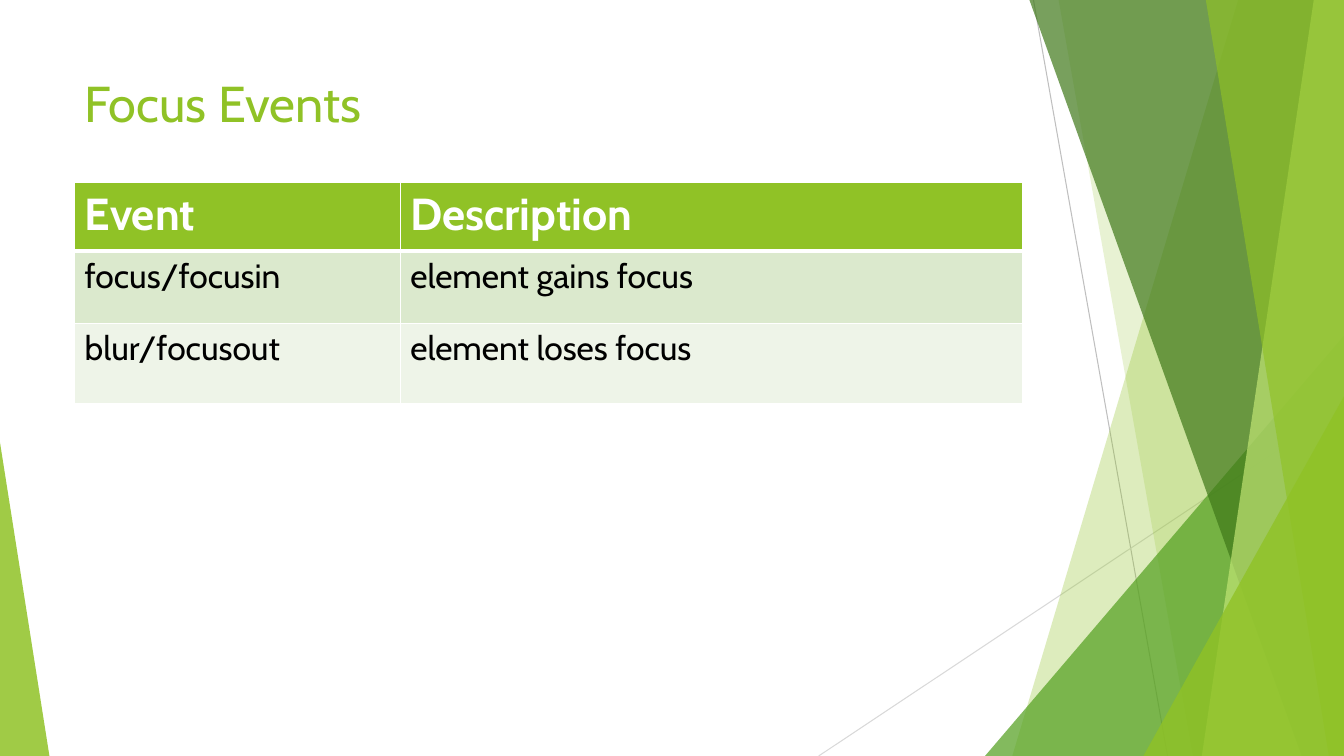
from dataclasses import dataclass
from lxml.etree import SubElement
from pptx import Presentation
from pptx.dml.color import RGBColor
from pptx.enum.shapes import MSO_CONNECTOR, MSO_SHAPE
from pptx.enum.text import MSO_ANCHOR, PP_ALIGN
from pptx.oxml.ns import qn
from pptx.util import Inches, Pt


@dataclass(frozen=True)
class Theme:
    face: str = "Cabin"
    lime: str = "90C226"
    green: str = "54A021"
    dark: str = "3F7819"
    pale: str = "C0E474"
    white: str = "FFFFFF"
    black: str = "000000"
    bands: tuple = ("DBE9CD", "EEF4E8")
    rules: tuple = ("BFBFBF", "D9D9D9")
    title: int = 36
    head: int = 32
    body: int = 24
    hair: float = 0.75
    thin: int = 1
    thick: int = 3


THEME = Theme()
WIDE, HIGH = 13.33, 7.5
ROWS = [
    ("Event", "Description"),
    ("focus/focusin", "element gains focus"),
    ("blur/focusout", "element loses focus"),
]


def apply(item, style):
    for key, value in style.items():
        setattr(item, key, value)


def paint(fill, tint):
    fill.solid()
    fill.fore_color.rgb = RGBColor.from_string(tint)


def write(frame, text, size, tint, bold=False):
    frame.text = text
    part = frame.paragraphs[0]
    part.alignment = PP_ALIGN.LEFT
    font = part.runs[0].font
    apply(font, {"name": THEME.face, "size": Pt(size), "bold": bold})
    font.color.rgb = RGBColor.from_string(tint)


def glaze(shape, tint, alpha):
    shape.shadow.inherit = False
    paint(shape.fill, tint)
    shape.line.fill.background()
    color = shape.element.spPr.find(".//" + qn("a:srgbClr"))
    SubElement(color, qn("a:alpha"), val=str(alpha * 1000))


def draw_line(slide, start, end, tint):
    ends = [Inches(n) for n in (*start, *end)]
    line = slide.shapes.add_connector(MSO_CONNECTOR.STRAIGHT, *ends)
    line.line.width = Pt(THEME.hair)
    paint(line.line.fill, tint)
    SubElement(line.element.spPr, qn("a:effectLst"))


def draw_shard(slide, box, top, base, tint, alpha):
    left, head, width, height = box
    right, foot = left + width, head + height
    points = [(left + top, head), (right, head), (right, foot), (left + base, foot)]
    points = [(Inches(x), Inches(y)) for x, y in points]
    path = slide.shapes.build_freeform(*points[0])
    path.add_line_segments(points[1:], close=True)
    glaze(path.convert_to_shape(), tint, alpha)


def draw_wedge(slide, box, peak, tint, alpha):
    size = [Inches(n) for n in box]
    wedge = slide.shapes.add_shape(MSO_SHAPE.ISOSCELES_TRIANGLE, *size)
    wedge.adjustments[0] = peak
    glaze(wedge, tint, alpha)


def draw_facets(slide, box):
    left, top, width, height = box
    right, foot = left + width, top + height

    def shard(*style):
        draw_shard(slide, box, *style)

    def wedge(wide, high, *style):
        draw_wedge(slide, (right - wide, foot - high, wide, high), 1, *style)

    draw_line(slide, (left + 0.48, top), (left + 1.81, foot), THEME.rules[0])
    draw_line(slide, (right, top + 4.03), (left - 1.65, foot), THEME.rules[1])
    shard(2.51, 0.27, THEME.lime, 30)
    shard(0.73, 2.06, THEME.lime, 20)
    wedge(3.56, 4.17, THEME.green, 72)
    shard(0.44, 3.14, THEME.dark, 70)
    shard(3.26, 2.15, THEME.pale, 70)
    shard(2.19, 3.41, THEME.lime, 65)
    wedge(1.99, 3.57, THEME.lime, 80)


def draw_title(slide, box, text):
    title = slide.shapes.title
    apply(title, dict(zip(("left", "top", "width", "height"), map(Inches, box))))
    frame = title.text_frame
    apply(frame, {"vertical_anchor": MSO_ANCHOR.TOP, "word_wrap": True})
    write(frame, text, THEME.title, THEME.lime)


def edge_cell(cell, row):
    props = cell._tc.get_or_add_tcPr()
    top = THEME.thick if row == 1 else THEME.thin
    base = THEME.thick if row == 0 else THEME.thin
    for side, size in zip("LRTB", (THEME.thin, THEME.thin, top, base)):
        edge = SubElement(props, qn("a:ln" + side), w=str(Pt(size)))
        fill = SubElement(edge, qn("a:solidFill"))
        SubElement(fill, qn("a:srgbClr"), val=THEME.white)


def draw_table(slide, box, rows):
    size = [Inches(n) for n in box]
    table = slide.shapes.add_table(len(rows), len(rows[0]), *size).table
    first = 3.23
    for col, width in zip(table.columns, (first, box[2] - first)):
        col.width = Inches(width)
    for row, height in zip(table.rows, (0.68, 0.72, 0.79)):
        row.height = Inches(height)
    for r, texts in enumerate(rows):
        for c, text in enumerate(texts):
            cell = table.cell(r, c)
            edge_cell(cell, r)
            if r == 0:
                paint(cell.fill, THEME.lime)
                write(cell.text_frame, text, THEME.head, THEME.white, True)
            else:
                paint(cell.fill, THEME.bands[(r - 1) % 2])
                write(cell.text_frame, text, THEME.body, THEME.black)


def main():
    deck = Presentation()
    apply(deck, {"slide_width": Inches(WIDE), "slide_height": Inches(HIGH)})
    slide = deck.slides.add_slide(deck.slide_layouts[5])
    draw_facets(slide, (9.77, 0, WIDE - 9.77, HIGH))
    draw_wedge(slide, (0, HIGH - 3.11, 0.49, 3.11), 0, THEME.lime, 85)
    draw_title(slide, (0.74, 0.67, 9.4, 0.98), "Focus Events")
    draw_table(slide, (0.74, 1.81, 9.4, 2.19), ROWS)
    deck.save("out.pptx")


if __name__ == "__main__":
    main()
